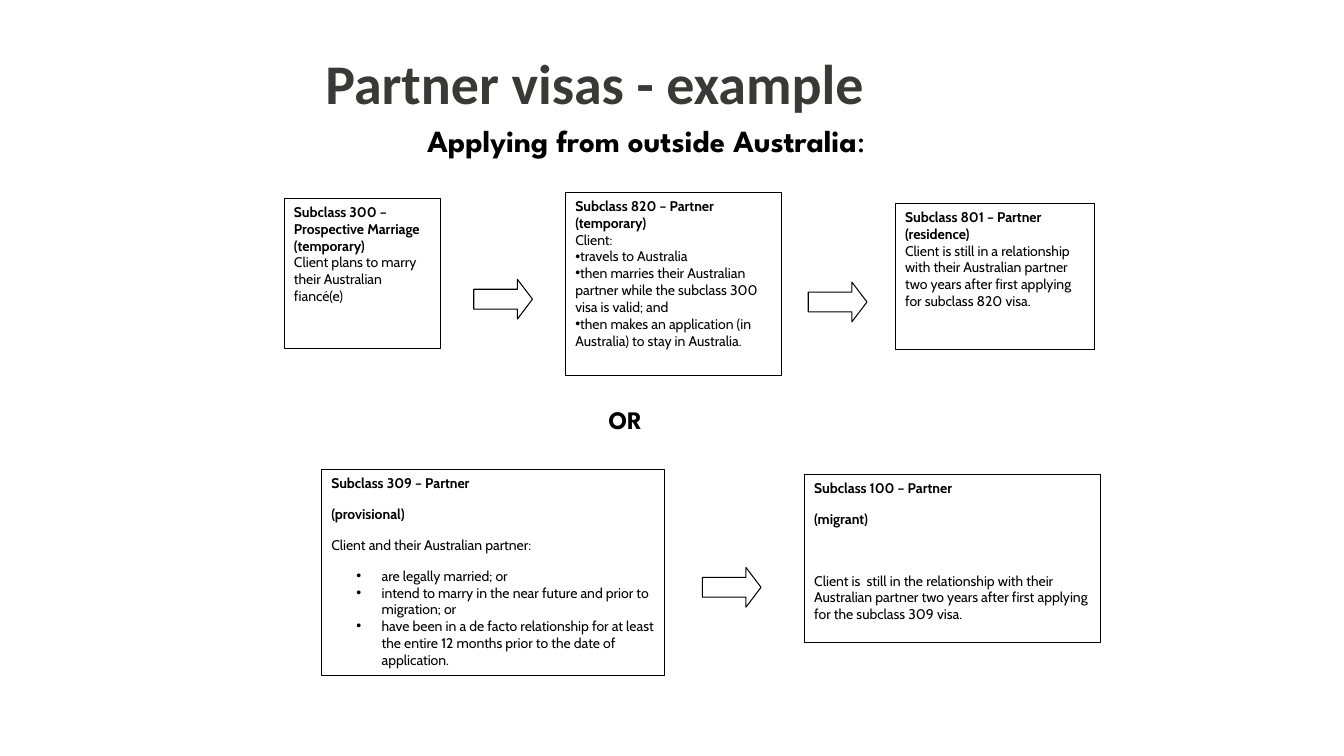
from lxml import etree
from pptx import Presentation
from pptx.dml.color import RGBColor
from pptx.enum.shapes import MSO_SHAPE as Preset
from pptx.enum.text import MSO_ANCHOR as Anchor, PP_ALIGN as Align
from pptx.oxml.ns import qn
from pptx.util import Cm, Pt


def color(value):
    return RGBColor.from_string(value)


def add_run(paragraph, text, **font_values):
    font = paragraph.add_run().font
    paragraph.runs[-1].text = text
    font.color.rgb = color(font_values.pop("color", "000000"))
    for name, value in font_values.items():
        setattr(font, name, value)


presentation = Presentation()
presentation.slide_width, presentation.slide_height = Cm(33.87), Cm(19.05)
slide = presentation.slides.add_slide(presentation.slide_layouts[6])

# Headings: place, anchor, line spacing, font, runs with their weight
LEAGUE = "League Spartan"
headings = [
    ((7.95, 1.19, 18.31, 1.98), Anchor.MIDDLE, 0.9,
     {"name": "Calibri", "size": Pt(40), "color": "3B3838"},
     [("Partner visas - example", True)]),
    ((10.52, 2.95, 13.18, 1.19), Anchor.TOP, 1.0, {"name": LEAGUE, "size": Pt(22)},
     [("Applying from outside Australia", True), (":", False)]),
    ((15.09, 10.06, 3.38, 1.02), Anchor.TOP, 1.0, {"name": LEAGUE, "size": Pt(18)},
     [("OR", True)]),
]
for place, anchor, spacing, font_values, runs in headings:
    frame = slide.shapes.add_textbox(*map(Cm, place)).text_frame
    frame.word_wrap = True
    frame.vertical_anchor = anchor
    paragraph = frame.paragraphs[0]
    paragraph.line_spacing = spacing
    for text, bold in runs:
        add_run(paragraph, text, bold=bold, **font_values)

# Visa boxes: place, bold lines, plain lines, bullets, bullet indent,
# space after each line, space after the bold lines
visas = [
    ((7.16, 5.0, 3.94, 3.78),
     ["Subclass 300 – Prospective Marriage", "(temporary)"],
     ["Client plans to marry their Australian fiancé(e)"], [], 0, 0, 0),
    ((14.25, 4.85, 5.44, 4.62),
     ["Subclass 820 – Partner", "(temporary)"], ["Client:"],
     ["travels to Australia",
      "then marries their Australian partner while the subclass 300 visa is valid; and",
      "then makes an application (in Australia) to stay in Australia."], 0, 0, 0),
    ((22.56, 5.13, 5.03, 3.68),
     ["Subclass 801 – Partner", "(residence)"],
     ["Client is still in a relationship with their Australian partner two years "
      "after first applying for subclass 820 visa."], [], 0, 0, 0),
    ((8.1, 11.84, 8.66, 5.18),
     ["Subclass 309 – Partner", "(provisional)"],
     ["Client and their Australian partner:"],
     ["are legally married; or",
      "intend to marry in the near future and prior to migration; or",
      "have been in a de facto relationship for at least the entire 12 months "
      "prior to the date of application."], 1.27, 10, 10),
    ((20.27, 11.96, 7.47, 4.24),
     ["Subclass 100 – Partner", "(migrant)"],
     ["Client is  still in the relationship with their  Australian partner two years "
      "after first applying for the subclass 309 visa."], [], 0, 10, 32),
]
boxes = []
for place, titles, lines, bullets, indent, gap, title_gap in visas:
    box = slide.shapes.add_shape(Preset.RECTANGLE, *map(Cm, place))
    boxes.append(box)
    frame = box.text_frame
    frame.word_wrap = True
    frame.vertical_anchor = Anchor.TOP
    for index, text in enumerate(titles + lines + bullets):
        paragraph = frame.paragraphs[0] if index == 0 else frame.add_paragraph()
        is_bullet = index >= len(titles + lines)
        after = title_gap if index == len(titles) - 1 else gap
        formats = {"alignment": Align.LEFT, "space_after": Pt(0 if is_bullet else after)}
        for name, value in formats.items():
            setattr(paragraph, name, value)
        add_run(paragraph, text, name="Cabin", size=Pt(10), bold=index < len(titles))
        if is_bullet:
            properties = paragraph._p.get_or_add_pPr()
            properties.set("marL", str(Cm(indent)))
            properties.set("indent", str(-Cm(indent / 2)))
            etree.SubElement(properties, qn("a:buFont")).set("typeface", "Arial")
            etree.SubElement(properties, qn("a:buChar")).set("char", "•")

# Arrows between the boxes
arrows = []
for left, top in [(11.94, 7.04), (20.37, 7.11), (17.7, 14.3)]:
    arrow = slide.shapes.add_shape(Preset.RIGHT_ARROW, Cm(left), Cm(top), Cm(1.48), Cm(1))
    arrow.adjustments[0], arrow.adjustments[1] = 0.5, 0.38
    arrows.append(arrow)

# Shared look of boxes and arrows
for shape in boxes + arrows:
    shape.shadow.inherit = False
    shape.fill.solid()
    shape.fill.fore_color.rgb = color("FFFFFF")
    shape.line.color.rgb = color("000000")
    shape.line.width = Pt(0.75)

presentation.save("out.pptx")
